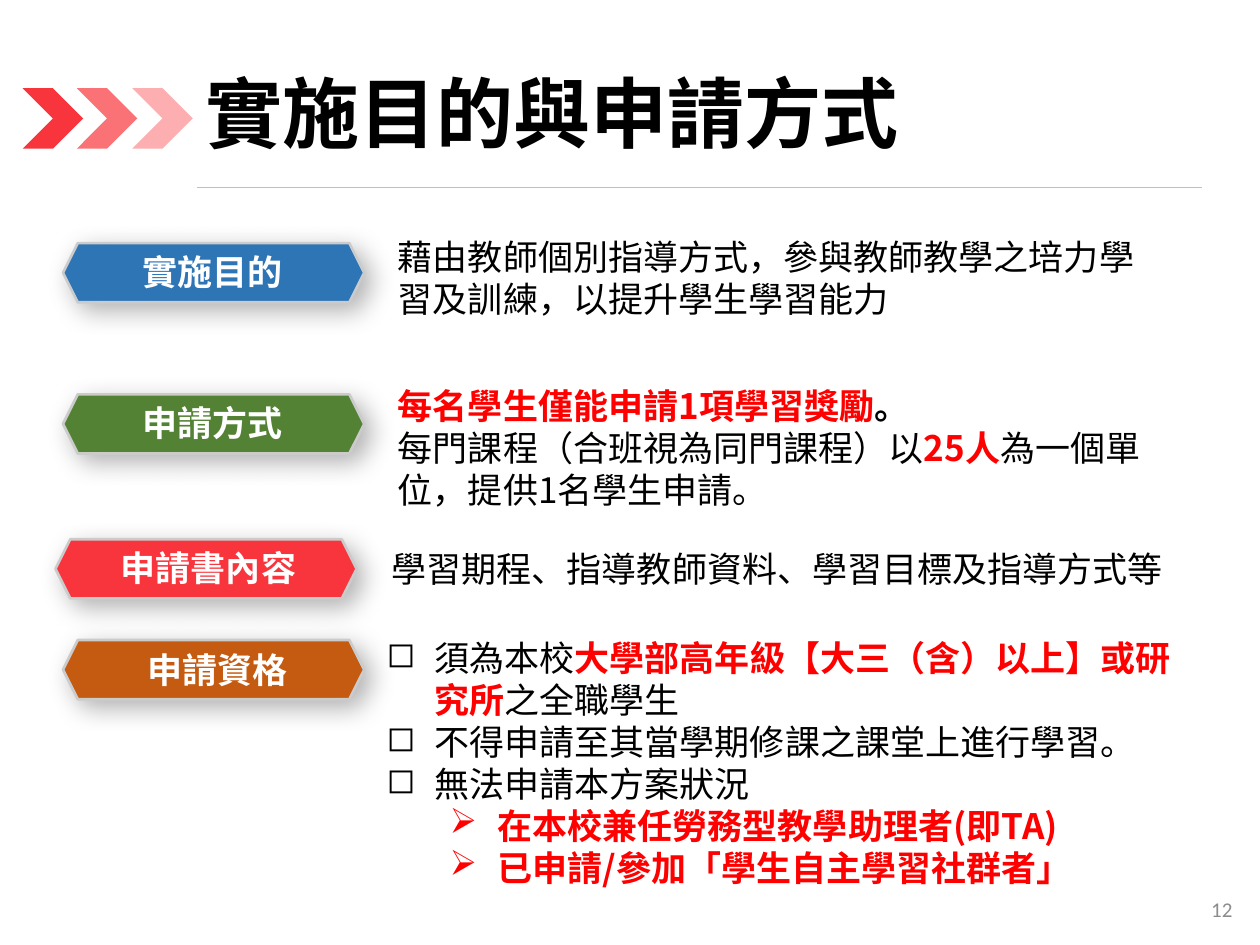
from dataclasses import dataclass
from lxml.etree import SubElement
from pptx import Presentation
from pptx.dml.color import RGBColor
from pptx.enum.shapes import MSO_CONNECTOR, MSO_SHAPE
from pptx.enum.text import MSO_ANCHOR, MSO_AUTO_SIZE, PP_ALIGN
from pptx.oxml.ns import qn
from pptx.util import Inches, Pt


@dataclass(frozen=True)
class Theme:
    font: str = "Noto Sans CJK SC"
    small: str = "Calibri"
    black: str = "000000"
    white: str = "FFFFFF"
    hot: str = "FF0000"
    red: str = "F8353D"
    blue: str = "2E75B6"
    green: str = "548235"
    brown: str = "C55A11"
    edge: str = "CBCBCB"
    rule: str = "BFBFBF"
    gray: str = "8C8C8C"
    head: int = 44
    body: int = 20
    foot: int = 12
    pitch: int = 24


T = Theme()
PLAIN = {"size": T.body, "color": T.black, "bold": False}
BOLD = {**PLAIN, "bold": True}
HOT = {**BOLD, "color": T.hot}
LABEL = {**BOLD, "color": T.white}
TITLE = {**BOLD, "size": T.head}
PAGE = {"size": T.foot, "color": T.gray, "bold": False, "font": T.small}
SQUARE = ("◻", 0.38, 0)
ARROW = ("➢", 0.88, 1)

LABELS = [
    ("實施目的", T.blue, (0.5, 1.93), (0.74, 1.94, 1.89, 0.44)),
    ("申請方式", T.green, (0.5, 3.13), (0.74, 3.14, 1.89, 0.44)),
    ("申請書內容", T.red, (0.44, 4.28), (0.68, 4.29, 1.95, 0.44)),
    ("申請資格", T.brown, (0.5, 5.08), (0.83, 5.1, 1.8, 0.44)),
]
BODIES = [
    ((3.06, 1.82, 6.3, 0.77), [
        (None, [("藉由教師個別指導方式，參與教師教學之培力學習及訓練，以提升學生學習能力", PLAIN)]),
    ]),
    ((3.06, 3, 6.3, 1.11), [
        (None, [("每名學生僅能申請1項學習獎勵", HOT), ("。", BOLD)]),
        (None, [("每門課程（合班視為同門課程）以", PLAIN), ("25人", HOT),
                ("為一個單位，提供1名學生申請。", PLAIN)]),
    ]),
    ((3.01, 4.3, 6.54, 0.44), [
        (None, [("學習期程、指導教師資料、學習目標及指導方式等", PLAIN)]),
    ]),
    ((2.97, 5, 6.48, 2.12), [
        (SQUARE, [("須為本校", PLAIN), ("大學部高年級【大三（含）以上】或研究所", HOT),
                  ("之全職學生", PLAIN)]),
        (SQUARE, [("不得申請至其當學期修課之課堂上進行學習。", PLAIN)]),
        (SQUARE, [("無法申請本方案狀況", PLAIN)]),
        (ARROW, [("在本校兼任勞務型教學助理者(即TA)", HOT)]),
        (ARROW, [("已申請/參加「學生自主學習社群者」", HOT)]),
    ]),
]


def assign(item, values):
    for name, value in values.items():
        setattr(item, name, value)


def place(item, box):
    assign(item, dict(zip(("left", "top", "width", "height"), map(Inches, box))))


def add_run(para, text, look):
    run = para.add_run()
    run.text = text
    face = look.get("font", T.font)
    assign(run.font, {"size": Pt(look["size"]), "bold": look["bold"], "name": face})
    run.font.color.rgb = RGBColor.from_string(look["color"])
    SubElement(run.font._element, qn("a:ea"), typeface=face)


def add_bullet(para, mark):
    sign, left, level = mark
    para.level = level
    props = para._p.get_or_add_pPr()
    props.set("marL", str(Inches(left)))
    props.set("indent", str(Inches(-0.38)))
    SubElement(props, qn("a:buChar"), char=sign)


def add_text(slide, box, paras, align=PP_ALIGN.LEFT, anchor=MSO_ANCHOR.TOP):
    frame = slide.shapes.add_textbox(*map(Inches, box)).text_frame
    assign(frame, {"word_wrap": True, "vertical_anchor": anchor})
    for index, (mark, runs) in enumerate(paras):
        para = frame.add_paragraph() if index else frame.paragraphs[0]
        assign(para, {"alignment": align, "line_spacing": Pt(T.pitch)})
        if mark:
            add_bullet(para, mark)
        for text, look in runs:
            add_run(para, text, look)


def add_shape(slide, kind, box, color):
    shape = slide.shapes.add_shape(kind, *map(Inches, box))
    shape.shadow.inherit = False
    shape.fill.solid()
    shape.fill.fore_color.rgb = RGBColor.from_string(color)
    shape.line.fill.background()
    return shape


def add_alpha(color, share):
    SubElement(color, qn("a:alpha"), val=str(share * 1000))


def add_chevron(slide, left, share):
    shape = add_shape(slide, MSO_SHAPE.CHEVRON, (left, 0.7, 0.48, 0.48), T.red)
    if share < 100:
        add_alpha(shape._element.spPr.find(qn("a:solidFill"))[0], share)


def add_shadow(shape):
    effects = shape._element.spPr.find(qn("a:effectLst"))
    shadow = SubElement(effects, qn("a:outerShdw"), blurRad=str(Pt(15)),
                        dist=str(Pt(6)), dir=str(45 * 60000), algn="tl", rotWithShape="0")
    add_alpha(SubElement(shadow, qn("a:srgbClr"), val=T.black), 30)


def add_label(slide, text, color, spot, box):
    shape = add_shape(slide, MSO_SHAPE.HEXAGON, (*spot, 2.39, 0.47), color)
    shape.line.color.rgb = RGBColor.from_string(T.edge)
    shape.line.width = Pt(1.5)
    add_shadow(shape)
    add_text(slide, box, [(None, [(text, LABEL)])], PP_ALIGN.CENTER)


def add_rule(slide):
    ends = map(Inches, (1.56, 1.49, 9.54, 1.49))
    line = slide.shapes.add_connector(MSO_CONNECTOR.STRAIGHT, *ends)
    line.line.color.rgb = RGBColor.from_string(T.rule)
    line.line.width = Pt(0.5)
    SubElement(line._element.spPr, qn("a:effectLst"))


def set_title(slide, text):
    title = slide.shapes.title
    place(title, (1.53, 0.42, 8.01, 1.02))
    frame = title.text_frame
    assign(frame, {"word_wrap": True, "auto_size": MSO_AUTO_SIZE.NONE,
                   "vertical_anchor": MSO_ANCHOR.MIDDLE})
    para = frame.paragraphs[0]
    assign(para, {"alignment": PP_ALIGN.LEFT, "line_spacing": 0.9})
    add_run(para, text, TITLE)


def main():
    deck = Presentation()
    assign(deck, {"slide_width": Inches(10), "slide_height": Inches(7.5)})
    slide = deck.slides.add_slide(deck.slide_layouts[5])
    set_title(slide, "實施目的與申請方式")
    add_rule(slide)
    for left, share in ((0.18, 100), (0.61, 70), (1.05, 40)):
        add_chevron(slide, left, share)
    for label in LABELS:
        add_label(slide, *label)
    for box, paras in BODIES:
        add_text(slide, box, paras)
    add_text(slide, (7.63, 6.95, 2.25, 0.4), [(None, [("12", PAGE)])],
             PP_ALIGN.RIGHT, MSO_ANCHOR.MIDDLE)
    deck.save("out.pptx")


if __name__ == "__main__":
    main()
